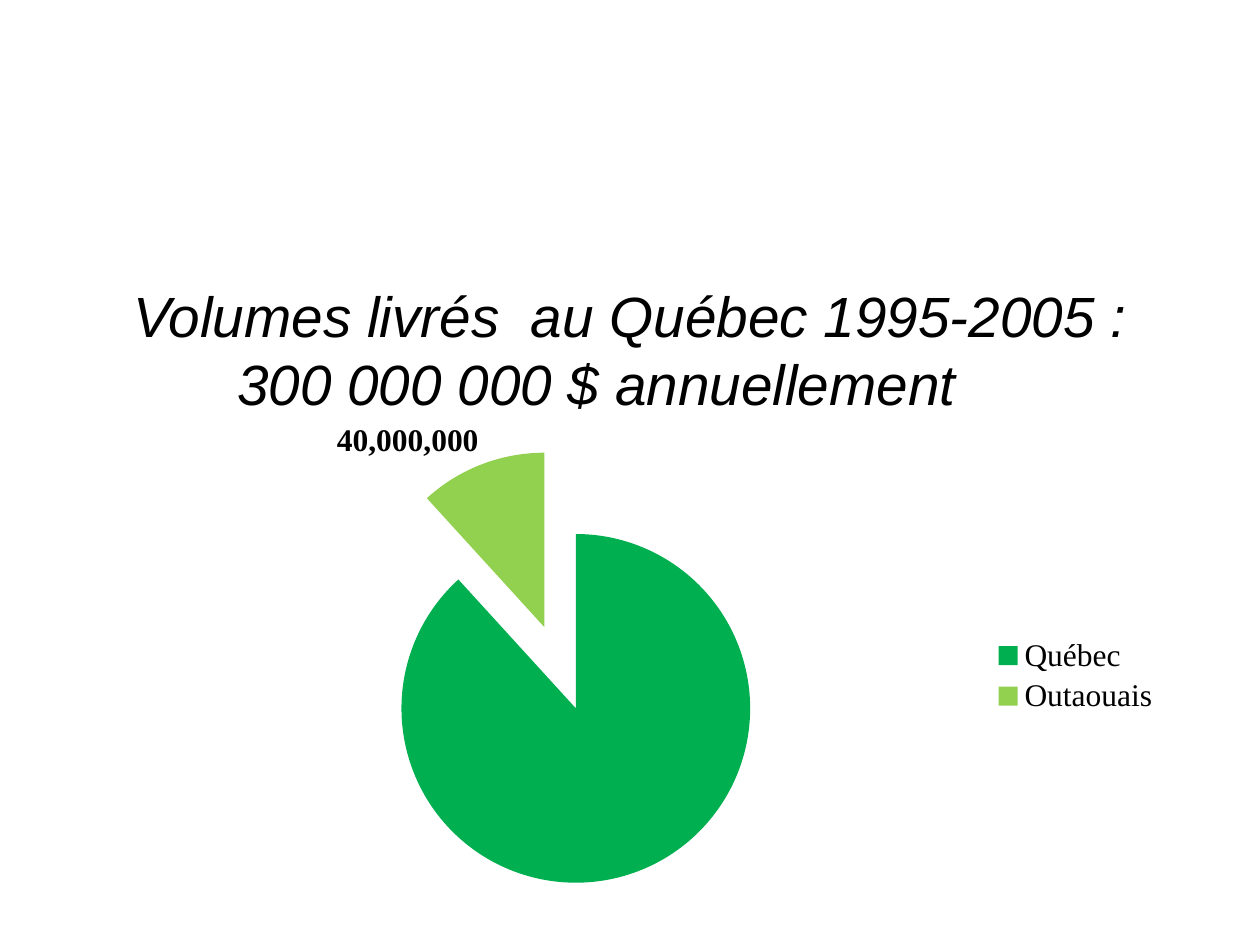
from lxml.etree import SubElement
from pptx import Presentation
from pptx.chart.data import CategoryChartData
from pptx.dml.color import RGBColor
from pptx.enum.chart import XL_CHART_TYPE, XL_LABEL_POSITION, XL_LEGEND_POSITION
from pptx.enum.text import MSO_ANCHOR, PP_ALIGN
from pptx.oxml import parse_xml
from pptx.oxml.ns import nsdecls, qn
from pptx.util import Cm, Pt


def paint(color, code):
    color.rgb = RGBColor.from_string(code)


def shade(run):
    fx = parse_xml(
        f'<a:effectLst {nsdecls("a")}><a:outerShdw blurRad="38100" dist="38100" '
        'dir="2700000" algn="tl"><a:srgbClr val="808080"/></a:outerShdw></a:effectLst>')
    run.font.fill._xPr.find(qn("a:solidFill")).addnext(fx)


def add_title(slide, left, top, width, height):
    box = slide.shapes.add_textbox(Cm(left), Cm(top), Cm(width), Cm(height))
    frame = box.text_frame
    frame.word_wrap = True
    frame.vertical_anchor = MSO_ANCHOR.MIDDLE
    frame.margin_top = Cm(1.45)
    lines = [
        ("Volumes livrés  au Québec 1995-2005 :", PP_ALIGN.CENTER, 0),
        ("300 000 000 $ annuellement", PP_ALIGN.LEFT, 2.63),
    ]
    for i, (text, align, indent) in enumerate(lines):
        para = frame.add_paragraph() if i else frame.paragraphs[0]
        para.alignment = align
        if indent:
            para._p.get_or_add_pPr().set("marL", str(Cm(indent)))
        run = para.add_run()
        run.text = text
        font = run.font
        font.size = Pt(32.4)
        font.italic = True
        paint(font.color, "000000")
        shade(run)
        font.name = "Arial"


def set_plot(chart, x, y, w, h):
    area = chart._chartSpace.chart.plotArea
    old = area.find(qn("c:layout"))
    if old is not None:
        area.remove(old)
    parts = "".join(f'<c:{tag} val="{val}"/>' for tag, val in [
        ("layoutTarget", "inner"), ("xMode", "edge"), ("yMode", "edge"),
        ("x", x), ("y", y), ("w", w), ("h", h)])
    area.insert(0, parse_xml(
        f'<c:layout {nsdecls("c")}><c:manualLayout>{parts}</c:manualLayout></c:layout>'))


def add_pie(slide, left, top, width, height):
    data = CategoryChartData(number_format="#,##0")
    data.categories = ["Québec", "Outaouais"]
    data.add_series("Series 1", [300000000, 40000000])
    chart = slide.shapes.add_chart(
        XL_CHART_TYPE.PIE, Cm(left), Cm(top), Cm(width), Cm(height), data).chart
    chart.has_title = False
    chart.font.size = Pt(18)
    chart.font.name = "Times New Roman"
    paint(chart.font.color, "000000")
    chart.has_legend = True
    chart.legend.position = XL_LEGEND_POSITION.RIGHT
    chart.legend.include_in_layout = False
    set_plot(chart, 0.08, 0.08, 0.69, 0.81)

    plot = chart.plots[0]
    plot.vary_by_categories = True
    series = plot.series[0]
    for i, code in enumerate(["00B050", "92D050"]):
        fill = series.points[i].format.fill
        fill.solid()
        paint(fill.fore_color, code)
    burst = parse_xml(f'<c:explosion {nsdecls("c")} val="25"/>')
    series._element.find(qn("c:dPt")).addprevious(burst)

    labels = series.data_labels
    labels.show_value = True
    labels.position = XL_LABEL_POSITION.OUTSIDE_END
    labels.number_format = "#,##0"
    labels.number_format_is_linked = False
    font = labels.font
    font.bold = True
    font.size = Pt(18)
    font.name = "Times New Roman"
    paint(font.color, "000000")
    mute = parse_xml(f'<c:dLbl {nsdecls("c")}><c:idx val="0"/></c:dLbl>')
    SubElement(mute, qn("c:delete")).set("val", "1")
    labels._element.insert(0, mute)


def main():
    deck = Presentation()
    deck.slide_width = Cm(25.4)
    deck.slide_height = Cm(19.05)
    slide = deck.slides.add_slide(deck.slide_layouts[6])
    add_title(slide, 1.9, 4.78, 21.6, 3.18)
    add_pie(slide, 2.16, 8.2, 21.49, 10.85)
    deck.save("out.pptx")


if __name__ == "__main__":
    main()
